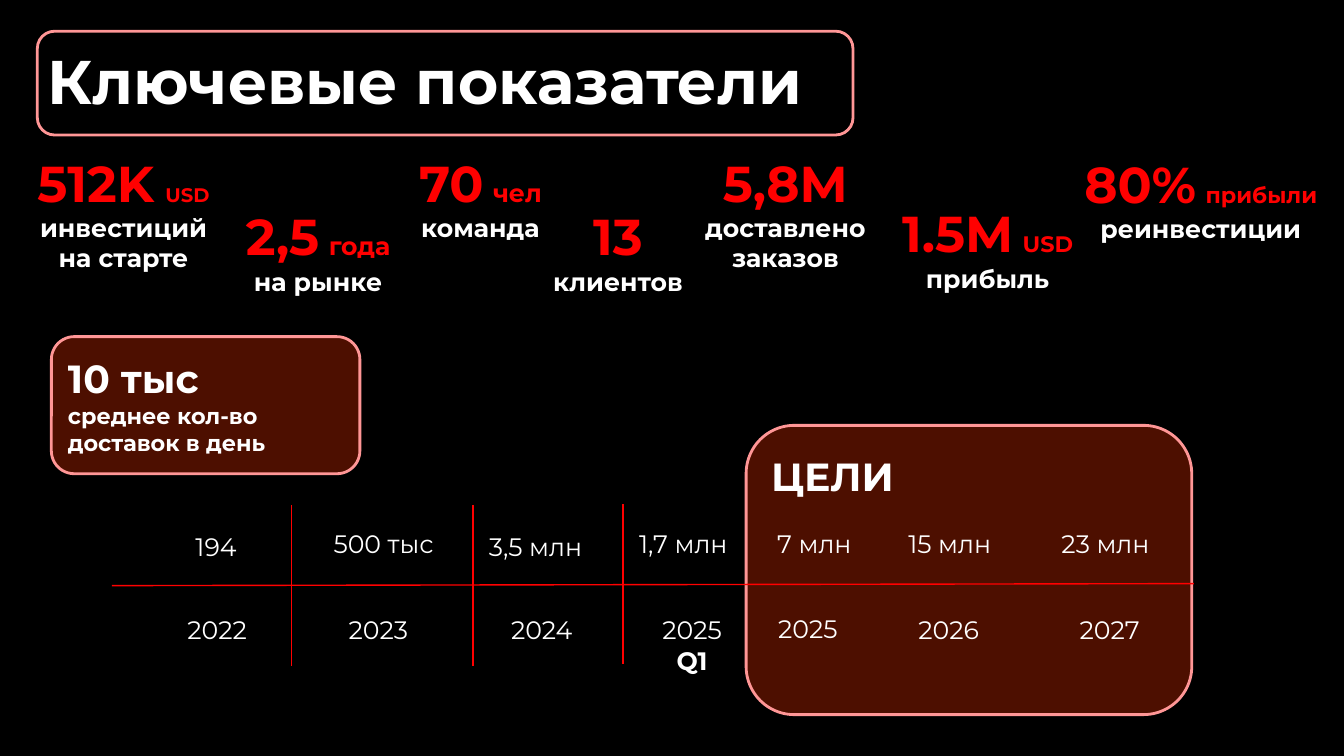
"""Build the key figures slide with a delivery timeline and goals."""
from dataclasses import dataclass

from lxml import etree
from pptx import Presentation
from pptx import util as u
from pptx.dml.color import RGBColor
from pptx.enum import shapes, text
from pptx.oxml.ns import qn

PX = 9144
FONT = "Montserrat"
COLORS = {
    "back": "000000",
    "white": "FFFFFF",
    "red": "FF0000",
    "border": "FF9696",
    "panel": "FF3300",
}


@dataclass(frozen=True)
class Box:
    left: int
    top: int
    width: int
    height: int


@dataclass(frozen=True)
class Span:
    words: str
    size: int = 18
    bold: bool = False
    color: str = "white"


@dataclass(frozen=True)
class Metric:
    box: Box
    value: str
    caption: str
    unit: str = ""
    unit_size: int = 18
    gap_size: int = 24


@dataclass(frozen=True)
class Label:
    left: int
    top: int
    width: int
    words: str


@dataclass(frozen=True)
class Rule:
    x1: int
    y1: int
    x2: int
    y2: int


METRICS = [
    Metric(Box(13, 146, 219, 80), "512K", "инвестиций на старте", "USD", 14, 28),
    Metric(Box(209, 199, 213, 80), "2,5", "на рынке", "года"),
    Metric(Box(384, 146, 185, 80), "70", "команда", "чел"),
    Metric(Box(526, 199, 174, 80), "13", "клиентов"),
    Metric(Box(677, 146, 204, 80), "5,8M", "доставлено заказов"),
    Metric(Box(862, 196, 235, 80), "1.5M", "прибыль", "USD", 16),
    Metric(Box(1031, 147, 320, 80), "80%", "реинвестиции", "прибыли", 16),
]
LABELS = [
    Label(184, 522, 68, "194"),
    Label(321, 519, 135, "500 тыс"),
    Label(475, 522, 131, "3,5 млн"),
    Label(624, 519, 125, "1,7 млн"),
    Label(761, 519, 105, "7 млн"),
    Label(891, 519, 118, "15 млн"),
    Label(1043, 519, 116, "23 млн"),
    Label(176, 605, 85, "2022"),
    Label(336, 605, 105, "2023"),
    Label(497, 605, 105, "2024"),
    Label(762, 604, 105, "2025"),
    Label(901, 605, 105, "2026"),
    Label(1061, 605, 105, "2027"),
]
RULES = [
    Rule(111, 581, 1184, 579),
    Rule(289, 501, 289, 661),
    Rule(469, 501, 469, 661),
    Rule(618, 500, 618, 659),
]


def color(name: str) -> RGBColor:
    return RGBColor.from_string(COLORS[name])


def emu(box: Box) -> list[u.Emu]:
    return [u.Emu(side * PX) for side in (box.left, box.top, box.width, box.height)]


def write(frame, lines: list[list[Span]], align=text.PP_ALIGN.LEFT) -> None:
    frame.word_wrap = True
    for index, spans in enumerate(lines):
        para = frame.add_paragraph() if index else frame.paragraphs[0]
        para.alignment = align
        for span in spans:
            run = para.add_run()
            run.text = span.words
            run.font.name = FONT
            run.font.size = u.Pt(span.size)
            run.font.bold = span.bold
            run.font.color.rgb = color(span.color)


def add_text(page, box: Box, lines: list[list[Span]], align=text.PP_ALIGN.LEFT) -> None:
    write(page.shapes.add_textbox(*emu(box)).text_frame, lines, align)


def add_panel(page, box: Box, filled: bool = True):
    panel = page.shapes.add_shape(shapes.MSO_SHAPE.ROUNDED_RECTANGLE, *emu(box))
    panel.shadow.inherit = False
    panel.line.color.rgb = color("border")
    panel.line.width = u.Pt(2)
    if filled:
        panel.fill.solid()
        panel.fill.fore_color.rgb = color("panel")
        shade = panel.fill._xPr.find(".//" + qn("a:srgbClr"))
        etree.SubElement(shade, qn("a:alpha"), val="30000")
    else:
        panel.fill.background()
    return panel


def add_metric(page, metric: Metric) -> None:
    figure = [Span(metric.value, 36, True, "red")]
    if metric.unit:
        figure.append(Span(" ", metric.gap_size, True, "red"))
        figure.append(Span(metric.unit, metric.unit_size, True, "red"))
    caption = [Span(metric.caption, bold=True)]
    add_text(page, metric.box, [figure, caption], text.PP_ALIGN.CENTER)


def add_rule(page, rule: Rule) -> None:
    ends = [u.Emu(end * PX) for end in (rule.x1, rule.y1, rule.x2, rule.y2)]
    line = page.shapes.add_connector(shapes.MSO_CONNECTOR.STRAIGHT, *ends)
    line.line.color.rgb = color("red")
    line.line.width = u.Pt(1)
    etree.SubElement(line._element.spPr, qn("a:effectLst"))


def add_title(page) -> None:
    title = page.shapes.title
    title.left, title.top, title.width, title.height = emu(Box(37, 26, 1163, 116))
    frame = title.text_frame
    frame.auto_size = text.MSO_AUTO_SIZE.NONE
    frame.vertical_anchor = text.MSO_ANCHOR.MIDDLE
    write(frame, [[Span("Ключевые показатели", 44, True)]])
    frame.paragraphs[0].line_spacing = 0.9


def main() -> None:
    deck = Presentation()
    deck.slide_width, deck.slide_height = u.Emu(1333 * PX), u.Emu(750 * PX)
    page = deck.slides.add_slide(deck.slide_layouts[5])
    page.background.fill.solid()
    page.background.fill.fore_color.rgb = color("back")

    add_panel(page, Box(740, 422, 442, 287))
    add_title(page)
    add_panel(page, Box(37, 31, 809, 103), filled=False)
    for metric in METRICS:
        add_metric(page, metric)

    daily = add_panel(page, Box(51, 334, 306, 136)).text_frame
    daily.vertical_anchor = text.MSO_ANCHOR.MIDDLE
    write(daily, [[Span("10 тыс", 28, True)],
                  [Span("среднее кол-во доставок в день", 16, True)]])

    add_text(page, Box(755, 444, 444, 57), [[Span("ЦЕЛИ", 28, True)]])
    for label in LABELS:
        add_text(page, Box(label.left, label.top, label.width, 37), [[Span(label.words)]])
    add_text(page, Box(634, 605, 105, 37),
             [[Span("2025 "), Span("Q1", bold=True)]], text.PP_ALIGN.CENTER)
    for rule in RULES:
        add_rule(page, rule)
    deck.save("out.pptx")


if __name__ == "__main__":
    main()
